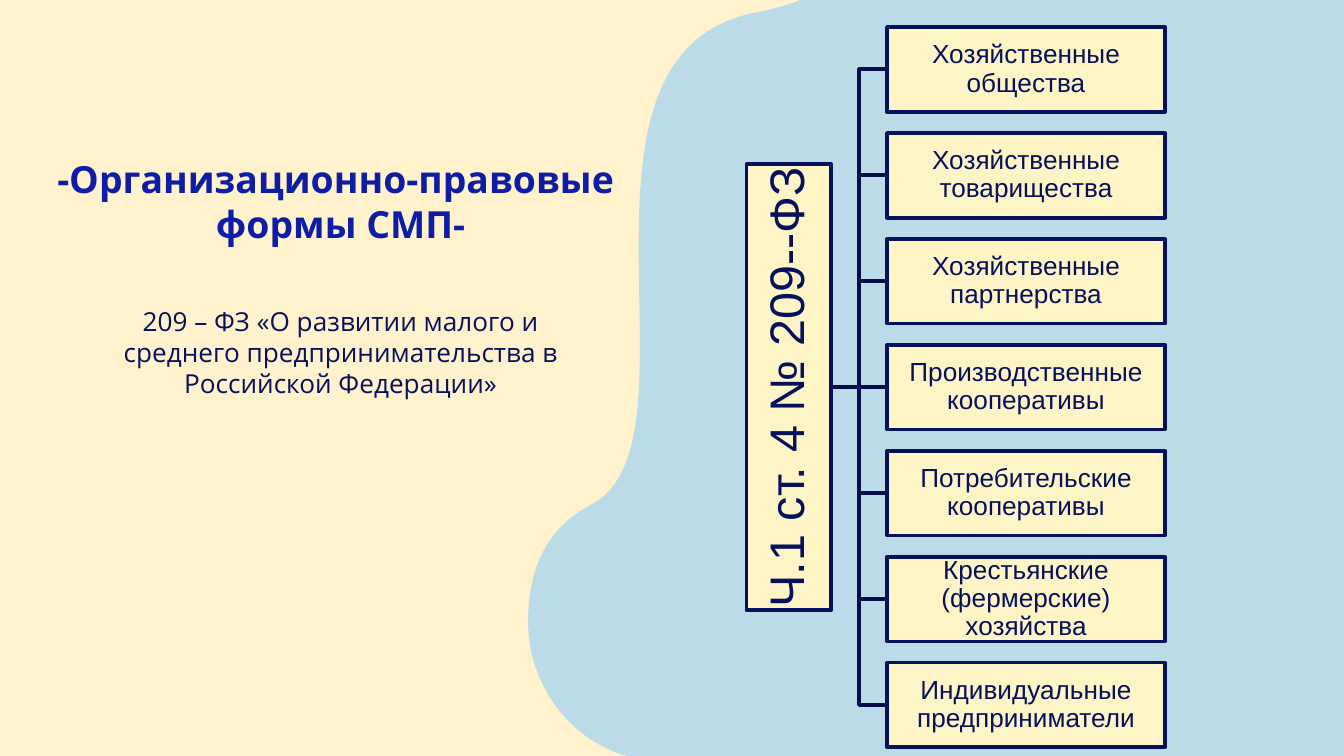
import pptx
import pptx.dml.color
import pptx.enum.shapes
import pptx.enum.text
import pptx.oxml.ns
import pptx.util
from lxml import etree

Pt = pptx.util.Pt
qn = pptx.oxml.ns.qn
Align = pptx.enum.text.PP_ALIGN
Anchor = pptx.enum.text.MSO_ANCHOR
AutoSize = pptx.enum.text.MSO_AUTO_SIZE
ELBOW = pptx.enum.shapes.MSO_CONNECTOR.ELBOW
RECTANGLE = pptx.enum.shapes.MSO_SHAPE.RECTANGLE

COLORS = {
    "background": "FFF2CC",
    "blob": "8FCEF9",
    "title": "0E1DA8",
    "ink": "07105C",
    "box": "FEF5C6",
    "branch": "060D4A",
}
HEADING_FONT, BOX_FONT = "Open Sans", "Arial"

TITLE = ["-Организационно-правовые ", "формы СМП-"]
LAW = ["209 – ФЗ «О развитии малого и среднего предпринимательства в Российской Федерации»"]
ARTICLE = "Ч.1 ст. 4 № 209--ФЗ"
LEGAL_FORMS = [
    "Хозяйственные общества",
    "Хозяйственные товарищества",
    "Хозяйственные партнерства",
    "Производственные кооперативы",
    "Потребительские кооперативы",
    "Крестьянские (фермерские) хозяйства",
    "Индивидуальные предприниматели",
]

# A curve has two control points and an end point, a straight side only an end
BLOB_START = (568, -99.4)
BLOB_SIDES = [
    [(510.5, -99.4), (490.3, -9.4), (406.1, 6.5)],
    [(290.2, 27.4), (381.6, 238.3), (316.1, 270.7)],
    [(291.6, 283.7), (283.7, 306), (283, 329.8)],
    [(281.5, 372.2), (313.9, 407.5), (354.2, 407.5)],
    [(914.4, 410.4)],
    [(938.9, 410.4), (961.9, 397.4), (974.9, 375.8)],
    [(999.4, 335.5), (1023.1, 270), (951.1, 233.3)],
    [(841.7, 178.6), (987.1, 71.3), (899.3, -13)],
    [(879.1, -32.4), (862.6, -38.9), (847.4, -38.9)],
    [(814.3, -38.9), (787.7, -9.4), (746.6, -9.4)],
    [(721.4, -9.4), (691.2, -20.2), (651.6, -55.4)],
    [(615.6, -87.8), (589.7, -99.4), BLOB_START],
]

BOX_HEIGHT = 45.4
FORM_LEFT, FORM_TOP, FORM_WIDTH, FORM_PITCH = 475.2, 14.5, 149, 56.75
ARTICLE_RIGHT, ARTICLE_LENGTH = 445.3, 239


def rgb(name):
    return pptx.dml.color.RGBColor.from_string(COLORS[name])


def write(frame, lines, size, font, color, bold=False, line_spacing=None):
    for index, line in enumerate(lines):
        paragraph = frame.paragraphs[0] if index == 0 else frame.add_paragraph()
        paragraph.alignment = Align.CENTER
        paragraph.line_spacing = line_spacing
        run = paragraph.add_run()
        run.text = line
        run.font.size = Pt(size)
        run.font.name = font
        run.font.bold = bold
        run.font.color.rgb = rgb(color)


def place(shape, left, top, width, height):
    shape.left, shape.top, shape.width, shape.height = map(Pt, (left, top, width, height))


def bend_sides(freeform, sides):
    """Join the three segments of each curved side into one Bezier curve."""
    segments = iter(list(freeform.element.iter(qn("a:lnTo"))))
    for side in sides:
        parts = [next(segments) for _ in side]
        if len(parts) == 3:
            curve = etree.Element(qn("a:cubicBezTo"))
            parts[0].addprevious(curve)
            for part in parts:
                curve.append(part[0])
                part.getparent().remove(part)


def add_blob(shapes):
    builder = shapes.build_freeform(*map(Pt, BLOB_START))
    points = [(Pt(x), Pt(y)) for side in BLOB_SIDES for x, y in side]
    builder.add_line_segments(points, close=True)
    blob = builder.convert_to_shape()
    bend_sides(blob, BLOB_SIDES)
    blob.shadow.inherit = False
    blob.line.fill.background()
    blob.fill.solid()
    blob.fill.fore_color.rgb = rgb("blob")
    color = next(blob.element.spPr.iter(qn("a:srgbClr")))
    etree.SubElement(color, qn("a:alpha"), val="61000")
    return blob


def add_box(shapes, text, left, top, width, size, inset):
    box = shapes.add_shape(RECTANGLE, *map(Pt, (left, top, width, BOX_HEIGHT)))
    box.shadow.inherit = False
    box.fill.solid()
    box.fill.fore_color.rgb = rgb("box")
    box.line.color.rgb = rgb("ink")
    box.line.width = Pt(2)
    frame = box.text_frame
    frame.word_wrap = True
    frame.vertical_anchor = Anchor.MIDDLE
    frame.margin_left = frame.margin_right = Pt(inset)
    frame.margin_top = frame.margin_bottom = Pt(inset)
    write(frame, [text], size, BOX_FONT, "ink", line_spacing=0.9)
    return box


def add_branch(shapes, start_y, end_y):
    branch = shapes.add_connector(
        ELBOW, *map(Pt, (ARTICLE_RIGHT, start_y, FORM_LEFT, end_y)))
    branch.line.color.rgb = rgb("branch")
    branch.line.width = Pt(2)
    etree.SubElement(branch.element.spPr, qn("a:effectLst"))


def main():
    presentation = pptx.Presentation()
    presentation.slide_width, presentation.slide_height = Pt(720), Pt(405)
    slide = presentation.slides.add_slide(presentation.slide_layouts[5])
    shapes = slide.shapes
    slide.background.fill.solid()
    slide.background.fill.fore_color.rgb = rgb("background")

    title = shapes.title
    title.element.addprevious(add_blob(shapes).element)
    place(title, 22.3, 79.9, 320.4, 55.4)
    title.text_frame.word_wrap = False
    title.text_frame.auto_size = AutoSize.SHAPE_TO_FIT_TEXT
    title.text_frame.vertical_anchor = Anchor.TOP
    write(title.text_frame, TITLE, 20, HEADING_FONT, "title", bold=True)

    law = shapes.add_textbox(*map(Pt, (38.9, 159.8, 287.3, 58.3)))
    law.text_frame.word_wrap = True
    law.text_frame.auto_size = AutoSize.SHAPE_TO_FIT_TEXT
    write(law.text_frame, LAW, 14, HEADING_FONT, "ink")

    tops = [FORM_TOP + row * FORM_PITCH for row in range(len(LEGAL_FORMS))]
    centers = [top + BOX_HEIGHT / 2 for top in tops]
    middle = len(LEGAL_FORMS) // 2
    for center in reversed(centers):
        add_branch(shapes, centers[middle], center)

    article_center = ARTICLE_RIGHT - BOX_HEIGHT / 2
    article = add_box(shapes, ARTICLE, article_center - ARTICLE_LENGTH / 2,
                      tops[middle], ARTICLE_LENGTH, 26, 1.3)
    article.rotation = 270

    for form, top in zip(LEGAL_FORMS, tops):
        add_box(shapes, form, FORM_LEFT, top, FORM_WIDTH, 14, 0.7)

    presentation.save("out.pptx")


if __name__ == "__main__":
    main()
